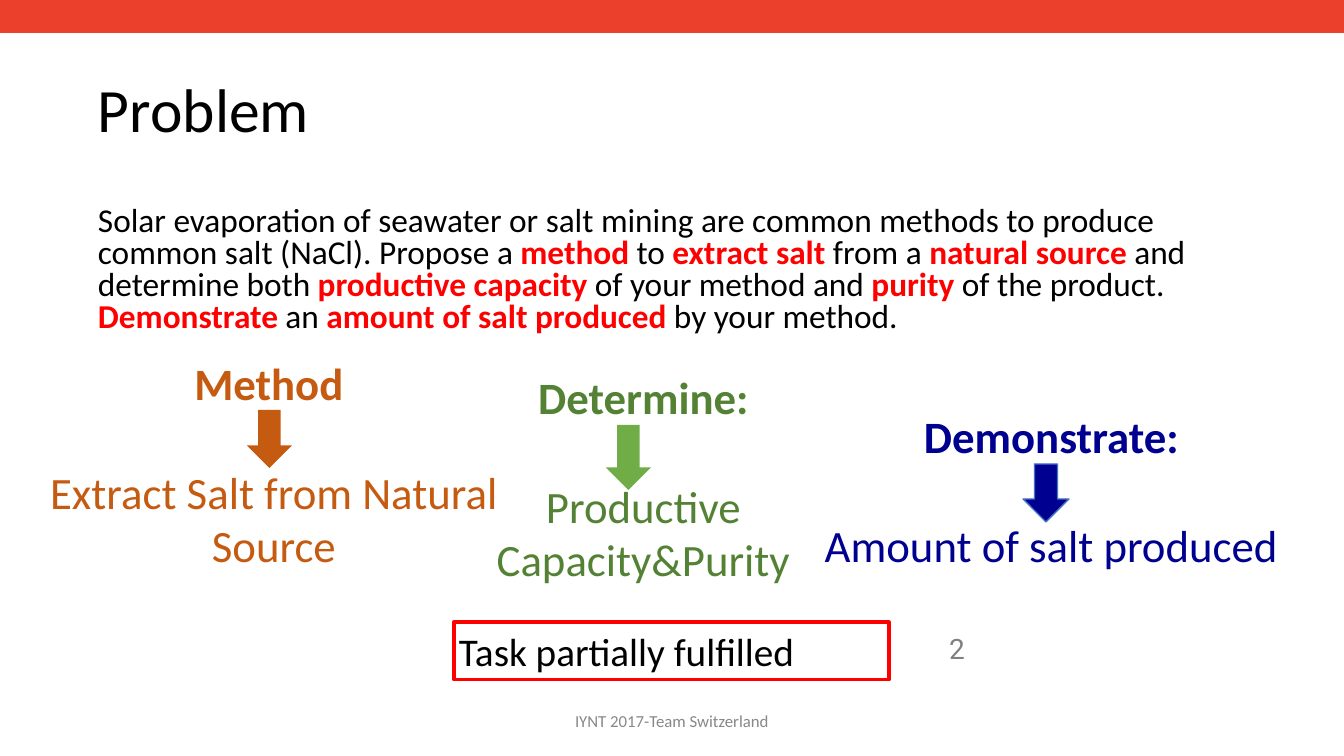
"""Build the salt extraction problem slide."""
from pptx import Presentation
from pptx.dml.color import RGBColor
from pptx.enum.shapes import MSO_CONNECTOR as Connector, MSO_SHAPE as Shape
from pptx.enum.text import MSO_ANCHOR as Anchor, PP_ALIGN as Align
from pptx.oxml.ns import qn
from pptx.util import Pt
from lxml.etree import SubElement

THEME = {
    "font": "Calibri", "number_font": "Roboto",
    "ink": "000000", "paper": "FFFFFF", "key": "FF0000", "bar": "EA402C",
    "footer": "888888", "number": "808080", "arrow_edge": "4472C4",
    "title_size": 44, "body_size": 23.8, "goal_size": 32,
    "status_size": 28, "number_size": 20, "footer_size": 12,
}

SLIDE_SIZE = (1344, 756)
BAR_Y, BAR_WEIGHT = 16, 24
INSET, GOAL_INSETS = 5, (10, 5)
GOAL_GAP = 39

TITLE = "Problem"
PROBLEM = [
    "Solar evaporation of seawater or salt mining are common methods to produce "
    "common salt (NaCl). Propose a ", "method ",
    "to ", "extract salt ",
    "from a ", "natural source ",
    "and determine both ", "productive capacity ",
    "of your method and ", "purity ",
    "of the product. ", "Demonstrate",
    " an ", "amount of salt produced ",
    "by your method.",
]
STATUS = "Task partially fulfilled"
NUMBER = "2"
FOOTER = "IYNT 2017-Team Switzerland"

GOALS = [
    {"heading": "Method ", "detail": "Extract Salt from Natural Source", "color": "C55A11",
     "box": (-4, 351, 556, 228), "arrow": (247, 410, 45, 58), "fill": "C55A11", "edge": None},
    {"heading": "Determine:", "detail": "Productive Capacity&Purity", "color": "548235",
     "box": (399, 365, 489, 228), "arrow": (606, 425, 45, 65), "fill": "70AD47", "edge": None},
    {"heading": "Demonstrate:", "detail": "Amount of salt produced", "color": "000090",
     "box": (807, 404, 489, 173), "arrow": (1023, 464, 46, 58), "fill": "000090",
     "edge": THEME["arrow_edge"]},
]


def px(length):
    return round(length * 914400 / 100.8)


def apply(target, values):
    for name, value in values.items():
        setattr(target, name, value)


def add_run(paragraph, text, size, color, bold=False, font=THEME["font"]):
    run = paragraph.add_run()
    run.text = text
    apply(run.font, {"name": font, "size": Pt(size), "bold": bold})
    run.font.color.rgb = RGBColor.from_string(color)


def set_frame(frame, insets=(INSET, INSET), anchor=Anchor.TOP, wrap=True):
    side, end = map(px, insets)
    apply(frame, {"margin_left": side, "margin_right": side, "margin_top": end,
                  "margin_bottom": end, "vertical_anchor": anchor, "word_wrap": wrap})
    return frame


def add_text(slide, box, **layout):
    return set_frame(slide.shapes.add_textbox(*map(px, box)).text_frame, **layout)


def add_block(slide, preset, box, fill, edge=None, weight=1):
    block = slide.shapes.add_shape(preset, *map(px, box))
    block.shadow.inherit = False
    block.fill.solid()
    block.fill.fore_color.rgb = RGBColor.from_string(fill)
    if edge:
        block.line.color.rgb = RGBColor.from_string(edge)
        block.line.width = Pt(weight)
    else:
        block.line.fill.background()
    return block


def add_bar(slide):
    bar = slide.shapes.add_connector(
        Connector.STRAIGHT, 0, px(BAR_Y), px(SLIDE_SIZE[0]), px(BAR_Y))
    bar.line.color.rgb = RGBColor.from_string(THEME["bar"])
    bar.line.width = Pt(BAR_WEIGHT)
    SubElement(bar._element.spPr, qn("a:effectLst"))


def add_label(slide, text, box, part, align=Align.LEFT, wrap=True, font=THEME["font"]):
    paragraph = add_text(slide, box, anchor=Anchor.MIDDLE, wrap=wrap).paragraphs[0]
    paragraph.alignment = align
    add_run(paragraph, text, THEME[f"{part}_size"], THEME.get(part, THEME["ink"]), font=font)
    return paragraph


def add_problem(slide):
    problem = add_text(slide, (93, 202, 1159, 146)).paragraphs[0]
    apply(problem, {"line_spacing": 0.8, "space_before": Pt(10)})
    for position, words in enumerate(PROBLEM):
        is_key = position % 2 == 1
        add_run(problem, words, THEME["body_size"], THEME["key" if is_key else "ink"], is_key)


def add_status(slide):
    status = add_block(slide, Shape.RECTANGLE, (454, 622, 435, 58),
                       THEME["paper"], THEME["key"], 2.25)
    paragraph = set_frame(status.text_frame).paragraphs[0]
    paragraph.alignment = Align.LEFT
    add_run(paragraph, STATUS, THEME["status_size"], THEME["ink"])


def add_goal(slide, goal):
    frame = add_text(slide, goal["box"], insets=GOAL_INSETS)
    heading, detail = frame.paragraphs[0], frame.add_paragraph()
    detail.space_before = Pt(GOAL_GAP)
    for paragraph, part in ((heading, "heading"), (detail, "detail")):
        paragraph.alignment = Align.CENTER
        add_run(paragraph, goal[part], THEME["goal_size"], goal["color"], part == "heading")
    add_block(slide, Shape.DOWN_ARROW, goal["arrow"], goal["fill"], goal["edge"])


def main():
    deck = Presentation()
    apply(deck, dict(zip(("slide_width", "slide_height"), map(px, SLIDE_SIZE))))
    slide = deck.slides.add_slide(deck.slide_layouts[6])
    add_bar(slide)
    add_label(slide, FOOTER, (445, 706, 454, 29), "footer", Align.CENTER)
    title = add_label(slide, TITLE, (93, 40, 1091, 146), "title")
    title.line_spacing = 0.9
    add_problem(slide)
    add_status(slide)
    add_label(slide, NUMBER, (944, 627, 26, 42), "number", Align.RIGHT,
              wrap=False, font=THEME["number_font"])
    for goal in GOALS:
        add_goal(slide, goal)
    deck.save("out.pptx")


if __name__ == "__main__":
    main()
